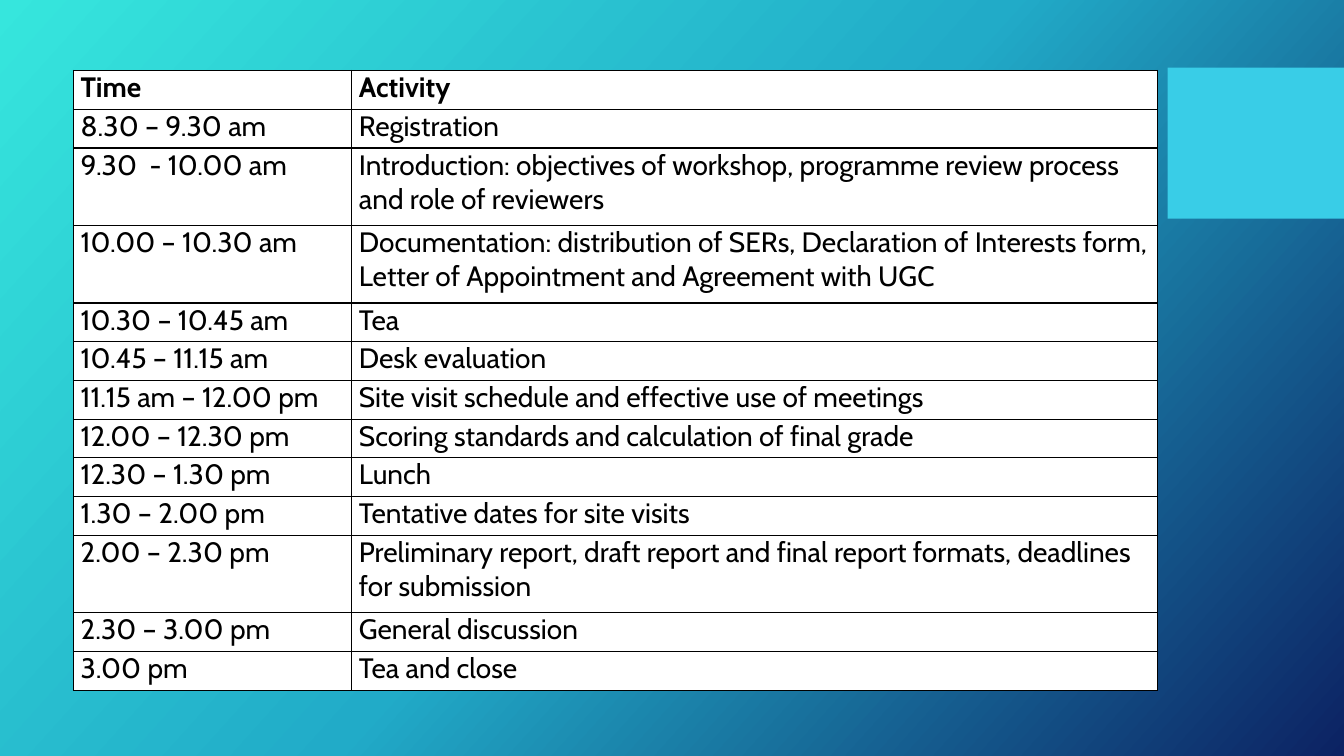
from copy import deepcopy
from dataclasses import dataclass

from lxml.etree import SubElement
from pptx import Presentation
from pptx.dml.color import RGBColor
from pptx.enum.shapes import MSO_SHAPE
from pptx.oxml.ns import qn
from pptx.util import Inches, Pt


@dataclass(frozen=True)
class Theme:
    font: str = "Cabin"
    size: int = 20
    ink: str = "000000"
    paper: str = "FFFFFF"
    accent: str = "39CDE7"
    backdrop: tuple = ("36E6DD", "21ABC8", "0C2263")
    backdrop_angle: int = 42
    rule_width: int = 1


THEME = Theme()
WIDTH, HEIGHT = Inches(13.33), Inches(7.5)
AGENDA_LEFT, AGENDA_TOP = Inches(0.73), Inches(0.7)
AGENDA_HEIGHT = Inches(6.15)
COLUMN_WIDTHS = Inches(2.76), Inches(7.99)
CELL_INSET = Inches(0.07)

AGENDA = [
    ("Time", "Activity", 1),
    ("8.30 – 9.30 am", "Registration", 1),
    ("9.30  - 10.00 am", "Introduction: objectives of workshop, programme review process and role of reviewers", 2),
    ("10.00 – 10.30 am", "Documentation: distribution of SERs, Declaration of Interests form, "
     "Letter of Appointment and Agreement with UGC", 2),
    ("10.30 – 10.45 am", "Tea", 1),
    ("10.45 – 11.15 am", "Desk evaluation", 1),
    ("11.15 am – 12.00 pm", "Site visit schedule and effective use of meetings", 1),
    ("12.00 – 12.30 pm", "Scoring standards and calculation of final grade", 1),
    ("12.30 – 1.30 pm", "Lunch", 1),
    ("1.30 – 2.00 pm", "Tentative dates for site visits", 1),
    ("2.00 – 2.30 pm", "Preliminary report, draft report and final report formats, deadlines for submission", 2),
    ("2.30 – 3.00 pm", "General discussion", 1),
    ("3.00 pm", "Tea and close", 1),
]


def rgb(code):
    return RGBColor.from_string(code)


def write(frame, text, size=THEME.size, color=THEME.ink, bold=False):
    run = frame.paragraphs[0].add_run()
    run.text = text
    run.font.name = THEME.font
    run.font.size = Pt(size)
    run.font.bold = bold
    run.font.color.rgb = rgb(color)


def paint_backdrop(slide):
    fill = slide.background.fill
    fill.gradient()
    fill.gradient_angle = 360 - THEME.backdrop_angle
    stops = slide.element.find(".//" + qn("a:gsLst"))
    stops.insert(1, deepcopy(stops[0]))
    last = len(THEME.backdrop) - 1
    for index, (stop, color) in enumerate(zip(fill.gradient_stops, THEME.backdrop)):
        stop.position = index / last
        stop.color.rgb = rgb(color)


def add_accent(slide):
    left, top = Inches(11.58), Inches(0.67)
    accent = slide.shapes.add_shape(MSO_SHAPE.RECTANGLE, left, top, WIDTH - left, HEIGHT // 5)
    accent.shadow.inherit = False
    accent.fill.solid()
    accent.fill.fore_color.rgb = rgb(THEME.accent)
    accent.line.fill.background()


def rule_cell(cell):
    properties = cell._tc.get_or_add_tcPr()
    for side in ("a:lnL", "a:lnR", "a:lnT", "a:lnB"):
        rule = SubElement(properties, qn(side), w=str(Pt(THEME.rule_width)))
        ink = SubElement(rule, qn("a:solidFill"))
        SubElement(ink, qn("a:srgbClr"), val=THEME.ink)


def fill_cell(cell, text, bold):
    cell.margin_left = cell.margin_right = CELL_INSET
    cell.margin_top = cell.margin_bottom = 0
    rule_cell(cell)
    cell.fill.solid()
    cell.fill.fore_color.rgb = rgb(THEME.paper)
    write(cell.text_frame, text, bold=bold)


def add_agenda(slide):
    line_height = AGENDA_HEIGHT // sum(lines for *_, lines in AGENDA)
    agenda = slide.shapes.add_table(
        len(AGENDA), len(COLUMN_WIDTHS), AGENDA_LEFT, AGENDA_TOP, sum(COLUMN_WIDTHS), AGENDA_HEIGHT
    ).table
    agenda.horz_banding = False
    for column, width in zip(agenda.columns, COLUMN_WIDTHS):
        column.width = width
    for index, (*entries, lines) in enumerate(AGENDA):
        agenda.rows[index].height = line_height * lines
        for cell, text in zip(agenda.rows[index].cells, entries):
            fill_cell(cell, text, bold=index == 0)


def main():
    deck = Presentation()
    deck.slide_width, deck.slide_height = WIDTH, HEIGHT
    slide = deck.slides.add_slide(deck.slide_layouts[6])
    paint_backdrop(slide)
    add_accent(slide)
    add_agenda(slide)
    deck.save("out.pptx")


if __name__ == "__main__":
    main()
